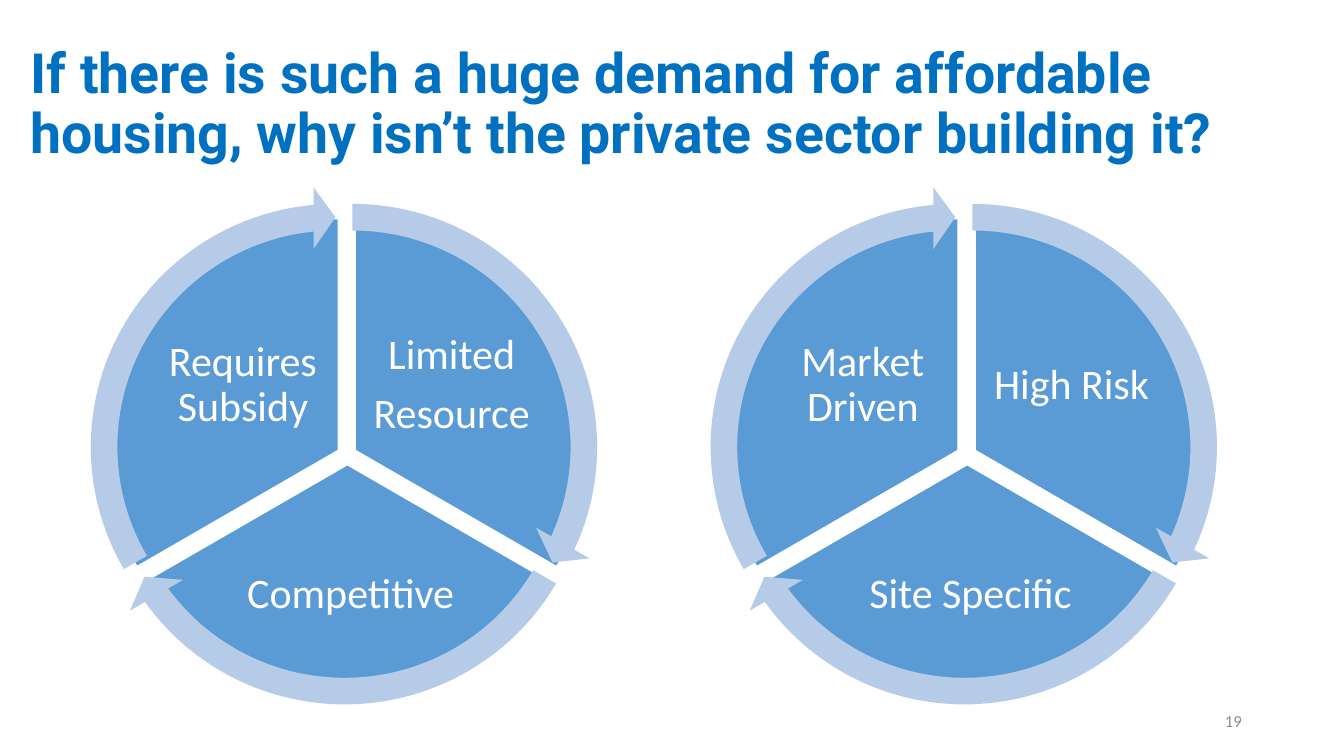
from pptx import Presentation
from pptx.dml.color import RGBColor
from pptx.enum.shapes import MSO_SHAPE
from pptx.enum.text import MSO_ANCHOR, MSO_AUTO_SIZE, PP_ALIGN
from pptx.util import Cm, Pt

PIE, ARROW = MSO_SHAPE.PIE, MSO_SHAPE.CIRCULAR_ARROW
TOP, MIDDLE = MSO_ANCHOR.TOP, MSO_ANCHOR.MIDDLE
LEFT, CENTER, RIGHT = PP_ALIGN.LEFT, PP_ALIGN.CENTER, PP_ALIGN.RIGHT
NO_FIT = MSO_AUTO_SIZE.NONE

BLUE, PALE, WHITE, TITLE_BLUE, GREY = "5B9BD5", "B5CBE7", "FFFFFF", "0070C0", "8C8C8C"

# Per sector: x and y shift, pie angles, arrow head and tail angles (1 = 100000 units)
SECTORS = [
    (0.43, 0, (162, 18), (14.725, 161.994)),
    (0.23, 0.36, (18, 90), (86.72, 18.005)),
    (0, 0, (90, 162), (158.73, 90)),
]
# Label boxes inside a wheel: right, bottom, left
LABEL_BOXES = [(7.44, 3.28, 4.19, 3.48), (3.84, 8.76, 6.3, 3.05), (2.18, 3.28, 4.19, 3.48)]
PIE_INSET = 0.81


def rgb(color):
    return RGBColor.from_string(color)


def style_text(tf, text, font, size, color, align, bold=False, spacing=0.9, after=0):
    tf.word_wrap = True
    tf.auto_size = NO_FIT
    tf.text = text
    for p in tf.paragraphs:
        p.alignment = align
        p.line_spacing = spacing
        p.space_after = Pt(after)
        for r in p.runs:
            r.font.name, r.font.size, r.font.bold = font, Pt(size), bold
            r.font.color.rgb = rgb(color)


def add_figure(s, kind, box, adjustments, fill, line=None):
    sp = s.shapes.add_shape(kind, *map(Cm, box))
    sp.shadow.inherit = False
    for i, value in enumerate(adjustments):
        sp.adjustments[i] = value
    sp.fill.solid()
    sp.fill.fore_color.rgb = rgb(fill)
    if line:
        sp.line.color.rgb = rgb(line)
        sp.line.width = Pt(1)
    else:
        sp.line.fill.background()


def add_title(s, text, box):
    title = s.shapes.title
    title.left, title.top, title.width, title.height = map(Cm, box)
    title.text_frame.vertical_anchor = TOP
    style_text(title.text_frame, text, "Roboto", 39.6, TITLE_BLUE, LEFT, bold=True)


def add_wheel(s, left, top, labels):
    # Sectors
    for dx, dy, angles, _ in SECTORS:
        box = (left + dx + PIE_INSET, top + dy + PIE_INSET, 11.73, 11.68)
        add_figure(s, PIE, box, angles, BLUE, WHITE)
    # Arrows around the rim
    for dx, dy, _, (head, tail) in SECTORS:
        box = (left + dx, top + dy, 13.21, 13.13)
        add_figure(s, ARROW, box, (0.051, 3.275, head, tail, 0.059), PALE)
    # Labels
    for text, (dx, dy, width, height) in zip(labels, LABEL_BOXES):
        tf = s.shapes.add_textbox(Cm(left + dx), Cm(top + dy), Cm(width), Cm(height)).text_frame
        tf.margin_left = tf.margin_right = tf.margin_top = tf.margin_bottom = Cm(0.1)
        tf.vertical_anchor = MIDDLE
        style_text(tf, text, "Calibri", 30, WHITE, CENTER, after=10)


def add_slide_number(s, number, box):
    tf = s.shapes.add_textbox(*map(Cm, box)).text_frame
    tf.vertical_anchor = MIDDLE
    style_text(tf, number, "Calibri", 12, GREY, RIGHT, spacing=1.0)


def main():
    prs = Presentation()
    prs.slide_width, prs.slide_height = Cm(33.87), Cm(19.05)
    s = prs.slides.add_slide(prs.slide_layouts[5])
    add_title(s, "If there is such a huge demand for affordable housing, "
                 "why isn’t the private sector building it?", (0.51, 1.02, 33, 3.68))
    add_slide_number(s, "19", (23.93, 17.65, 7.62, 1.02))
    add_wheel(s, 1.85, 4.7, ["Limited\nResource", "Competitive", "Requires Subsidy"])
    add_wheel(s, 17.47, 4.7, ["High Risk", "Site Specific", "Market Driven"])
    prs.save("out.pptx")


if __name__ == "__main__":
    main()
